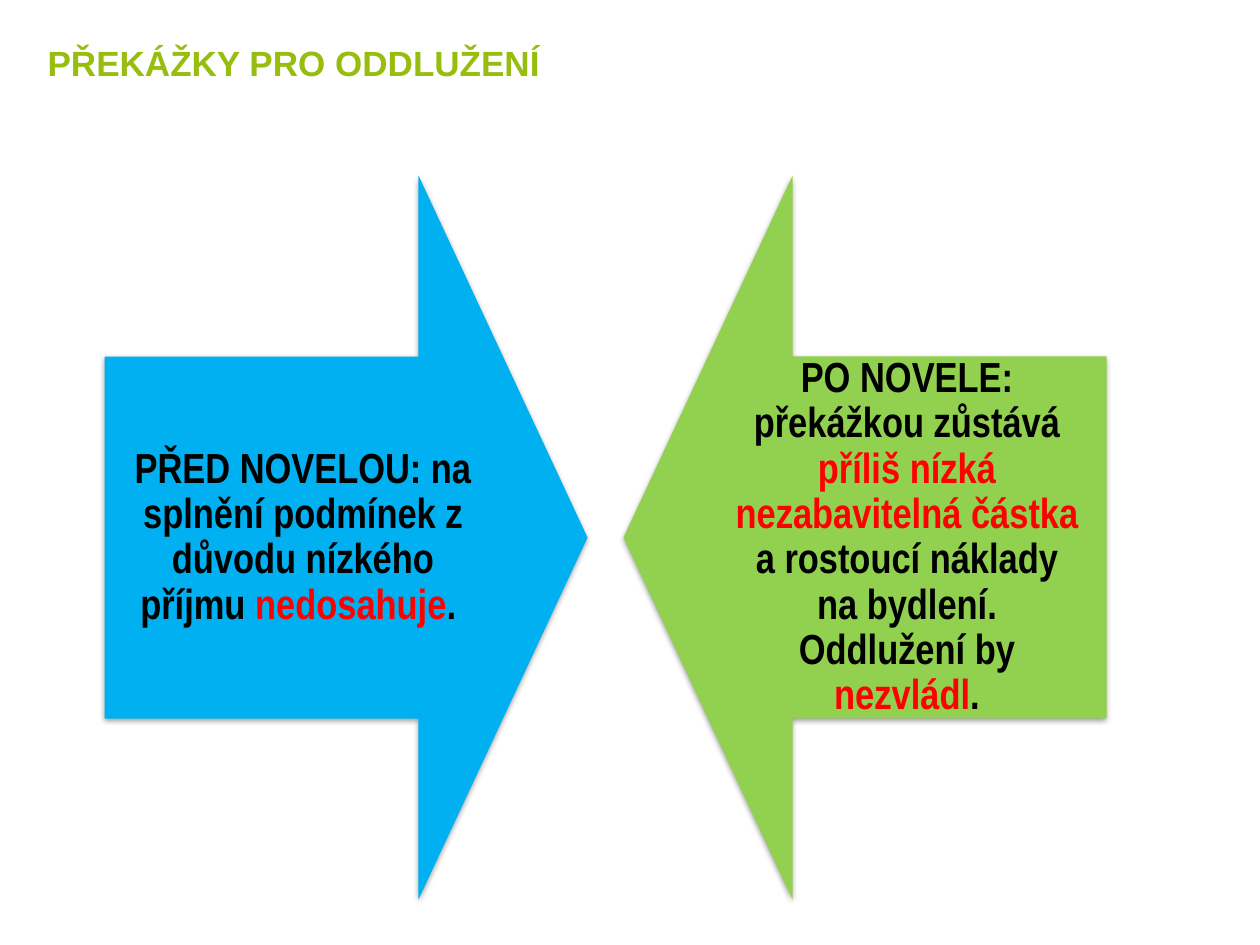
from lxml.etree import SubElement
from pptx import Presentation
from pptx.dml.color import RGBColor
from pptx.enum.shapes import MSO_SHAPE as SHAPE
from pptx.enum.text import MSO_ANCHOR as ANCHOR, MSO_AUTO_SIZE as AUTO_SIZE, PP_ALIGN as ALIGN
from pptx.oxml.ns import qn
from pptx.util import Emu, Pt

PX = 914400 / 126
BLUE = RGBColor(0x00, 0xB0, 0xF0)
GREEN = RGBColor(0x92, 0xD0, 0x50)
OLIVE = RGBColor(0x97, 0xBE, 0x0E)
BLACK = RGBColor(0x00, 0x00, 0x00)
RED = RGBColor(0xFF, 0x00, 0x00)

ARROW_WIDTH, ARROW_HEIGHT, ARROW_TOP = 724, 483, 296
TEXT_WIDTH, TEXT_HEIGHT, TEXT_TOP = 398, 363, 356

BEFORE = [
    ("PŘED NOVELOU: na splnění podmínek z důvodu nízkého příjmu ", BLACK),
    ("nedosahuje", RED),
    (". ", BLACK),
]
AFTER = [
    ("PO NOVELE: překážkou zůstává ", BLACK),
    ("příliš nízká nezabavitelná částka ", RED),
    ("a rostoucí náklady na bydlení. Oddlužení by ", BLACK),
    ("nezvládl", RED),
    (".", BLACK),
]


def px(*lengths):
    return [Emu(round(length * PX)) for length in lengths]


def style(font, name, size, color):
    font.name = name
    font.size = Pt(size)
    font.bold = True
    font.color.rgb = color


def add_title(slide, text):
    title = slide.shapes.title
    title.left, title.top, title.width, title.height = px(35, 35, 804, 55)
    frame = title.text_frame
    frame.text = text
    frame.word_wrap = True
    frame.auto_size = AUTO_SIZE.SHAPE_TO_FIT_TEXT
    frame.vertical_anchor = ANCHOR.TOP
    heading = frame.paragraphs[0]
    heading.alignment = ALIGN.LEFT
    style(heading.runs[0].font, "Arial", 20, OLIVE)


def add_soft_shadow(shape):
    effects = SubElement(shape._element.spPr, qn("a:effectLst"))
    shadow = SubElement(effects, qn("a:outerShdw"), blurRad=str(Pt(3.1)),
                        dist=str(Pt(1.6)), dir="5400000", rotWithShape="0")
    color = SubElement(shadow, qn("a:srgbClr"), val="000000")
    SubElement(color, qn("a:alpha"), val="38000")


def add_arrow(slide, left, rotation, color):
    arrow = slide.shapes.add_shape(
        SHAPE.DOWN_ARROW, *px(left, ARROW_TOP, ARROW_WIDTH, ARROW_HEIGHT))
    arrow.rotation = rotation
    arrow.adjustments[0] = 0.5
    arrow.adjustments[1] = 0.35
    arrow.fill.solid()
    arrow.fill.fore_color.rgb = color
    arrow.line.fill.background()
    add_soft_shadow(arrow)


def add_statement(slide, left, parts):
    box = slide.shapes.add_textbox(*px(left, TEXT_TOP, TEXT_WIDTH, TEXT_HEIGHT))
    frame = box.text_frame
    frame.word_wrap = True
    frame.vertical_anchor = ANCHOR.MIDDLE
    inset, = px(24)
    frame.margin_left = frame.margin_right = inset
    frame.margin_top = frame.margin_bottom = inset
    statement = frame.paragraphs[0]
    statement.alignment = ALIGN.CENTER
    statement.line_spacing = 0.9
    for text, color in parts:
        run = statement.add_run()
        run.text = text
        style(run.font, "Arial Narrow", 24, color)


def main():
    deck = Presentation()
    deck.slide_width, deck.slide_height = px(1260, 945)
    slide = deck.slides.add_slide(deck.slide_layouts[5])
    add_title(slide, "PŘEKÁŽKY PRO ODDLUŽENÍ")
    sides = [
        (-16, 270, BLUE, 104, BEFORE),
        (503, 90, GREEN, 708, AFTER),
    ]
    for arrow_left, rotation, color, text_left, parts in sides:
        add_arrow(slide, arrow_left, rotation, color)
        add_statement(slide, text_left, parts)
    deck.save("out.pptx")


if __name__ == "__main__":
    main()
